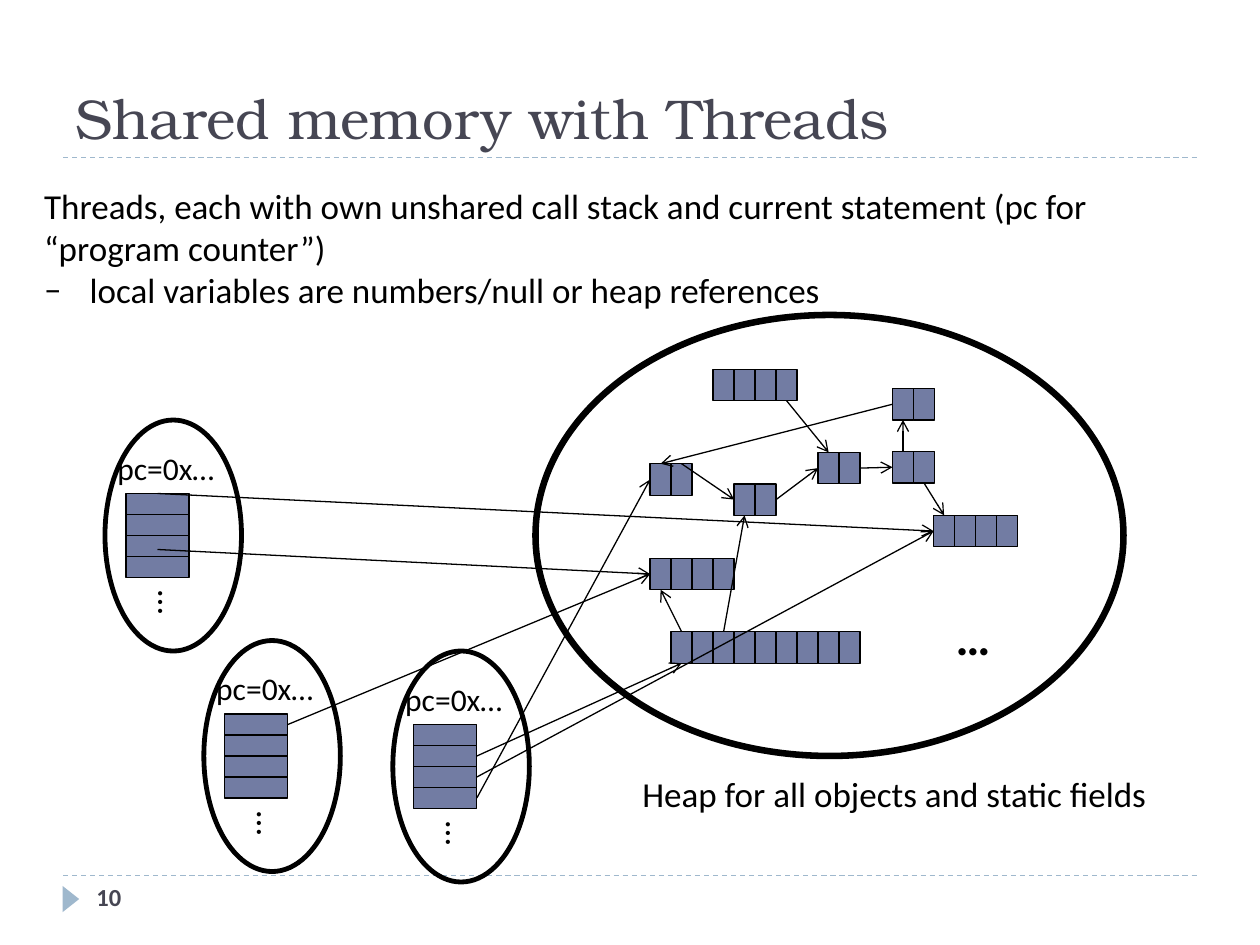
from dataclasses import dataclass
from typing import Any, Optional

import lxml.etree
import pptx
import pptx.dml.color
import pptx.enum.dml
import pptx.enum.shapes
import pptx.enum.text
import pptx.oxml.ns
import pptx.util

Pt = pptx.util.Pt
RGB = pptx.dml.color.RGBColor
Kind = pptx.enum.shapes.MSO_SHAPE
Anchor = pptx.enum.text.MSO_ANCHOR
qn = pptx.oxml.ns.qn

BLACK = RGB(0x00, 0x00, 0x00)
SLATE = RGB(0x46, 0x46, 0x53)
BLUE = RGB(0x72, 0x7C, 0xA3)
PALE = RGB(0x9F, 0xB8, 0xCD)
BODY = "Calibri"
HEAD = "TeX Gyre Bonum"
TOP, LEFT, BOTTOM, RIGHT = range(4)
CELL = (12, 18)
FRAME = (36, 12)


@dataclass
class Row:
    """A heap object: a row of equal cells."""
    name: str
    x: float
    y: float
    count: int


@dataclass
class Thread:
    name: str
    x: float
    y: float


@dataclass
class Link:
    """An arrow from one cell's side to another's."""
    tail: str
    start: int
    out: int
    head: str
    end: int
    into: int


ROWS = [
    Row("pair", 371.5, 265, 2),
    Row("quad", 371.5, 319, 4),
    Row("mid", 419.5, 276.5, 2),
    Row("hub", 467.5, 258.5, 2),
    Row("top", 407.5, 211, 4),
    Row("far", 533.5, 294.5, 4),
    Row("long", 383.5, 361, 9),
    Row("low", 510, 258, 2),
    Row("high", 510, 222, 2),
]
THREADS = [
    Thread("one", 60, 240),
    Thread("two", 116.5, 366),
    Thread("three", 224.5, 372),
]
LINKS = [
    Link("top", 3, BOTTOM, "hub", 0, TOP),
    Link("pair", 1, TOP, "mid", 0, LEFT),
    Link("mid", 1, RIGHT, "hub", 0, LEFT),
    Link("long", 0, TOP, "quad", 0, BOTTOM),
    Link("long", 2, TOP, "mid", 0, BOTTOM),
    Link("one", 0, TOP, "far", 0, LEFT),
    Link("two", 0, RIGHT, "quad", 0, LEFT),
    Link("three", 1, RIGHT, "long", 0, BOTTOM),
    Link("three", 3, RIGHT, "pair", 0, LEFT),
    Link("three", 2, RIGHT, "far", 0, LEFT),
    Link("hub", 1, RIGHT, "low", 0, LEFT),
    Link("low", 0, TOP, "high", 0, BOTTOM),
    Link("high", 0, LEFT, "pair", 0, TOP),
    Link("low", 1, BOTTOM, "far", 0, TOP),
]


def shape(slide: Any, kind: Any, x: float, y: float, w: float, h: float,
          fill: Optional[RGB], width: float) -> Any:
    """Draw a preset shape; no fill if None, no outline if width is 0."""
    item = slide.shapes.add_shape(kind, Pt(x), Pt(y), Pt(w), Pt(h))
    item.shadow.inherit = False
    if fill is None:
        item.fill.background()
    else:
        item.fill.solid()
        item.fill.fore_color.rgb = fill
    if width:
        item.line.color.rgb = BLACK
        item.line.width = Pt(width)
    else:
        item.line.fill.background()
    return item


def line(slide: Any, x1: float, y1: float, x2: float, y2: float,
         color: RGB, dash: bool = False, arrow: bool = False) -> Any:
    item = slide.shapes.add_connector(
        pptx.enum.shapes.MSO_CONNECTOR.STRAIGHT, Pt(x1), Pt(y1), Pt(x2), Pt(y2))
    item.line.color.rgb = color
    item.line.width = Pt(0.75)
    if dash:
        item.line.dash_style = pptx.enum.dml.MSO_LINE.DASH
    props = item.element.spPr
    if arrow:
        lxml.etree.SubElement(props.get_or_add_ln(), qn("a:tailEnd"), type="arrow")
    lxml.etree.SubElement(props, qn("a:effectLst"))
    return item


def write(para: Any, text: str, size: float, color: RGB = BLACK,
          bold: bool = False, face: str = BODY) -> None:
    run = para.add_run()
    run.text = text
    run.font.size = Pt(size)
    run.font.name = face
    run.font.bold = bold
    run.font.color.rgb = color


def label(slide: Any, x: float, y: float, w: float, h: float, text: str,
          size: float, color: RGB = BLACK, bold: bool = False) -> Any:
    box = slide.shapes.add_textbox(Pt(x), Pt(y), Pt(w), Pt(h))
    box.text_frame.word_wrap = False
    write(box.text_frame.paragraphs[0], text, size, color, bold)
    return box


def place(item: Any, x: float, y: float, w: float, h: float) -> None:
    item.left, item.top, item.width, item.height = Pt(x), Pt(y), Pt(w), Pt(h)


def bullet(para: Any, mark: Optional[str], indent: float) -> None:
    """Set the hanging indent and the mark, or remove the mark if None."""
    props = para._p.get_or_add_pPr()
    props.set("marL", str(Pt(indent)))
    props.set("indent", str(-Pt(indent)))
    if mark is None:
        lxml.etree.SubElement(props, qn("a:buNone"))
    else:
        lxml.etree.SubElement(props, qn("a:buFont"), typeface=BODY)
        lxml.etree.SubElement(props, qn("a:buChar"), char=mark)


def words(slide: Any) -> None:
    """Fill the title and the list."""
    title, body = slide.shapes.title, slide.placeholders[1]
    place(title, 36, 12, 648, 78)
    title.text_frame.vertical_anchor = Anchor.BOTTOM
    para = title.text_frame.paragraphs[0]
    para.alignment = pptx.enum.text.PP_ALIGN.LEFT
    write(para, "Shared memory with Threads", 32, SLATE, face=HEAD)

    place(body, 18, 102, 645, 80)
    frame = body.text_frame
    frame.auto_size = pptx.enum.text.MSO_AUTO_SIZE.NONE
    items = [
        (None, 0, "Threads, each with own unshared call stack and current "
                  "statement (pc for “program counter”)"),
        ("–", 26, "local variables are numbers/null or heap references"),
    ]
    for i, (mark, indent, text) in enumerate(items):
        para = frame.add_paragraph() if i else frame.paragraphs[0]
        para.space_before = Pt(0)
        bullet(para, mark, indent)
        write(para, text, 20)


def main() -> None:
    deck = pptx.Presentation()
    deck.slide_width, deck.slide_height = Pt(720), Pt(540)
    slide = deck.slides.add_slide(deck.slide_layouts[1])
    for y in (500.5, 90):
        line(slide, 36, y, 684, y, PALE, dash=True)
    shape(slide, Kind.ISOSCELES_TRIANGLE, 33, 509, 15, 9.5, PALE, 0).rotation = 90
    words(slide)
    label(slide, 48, 500.5, 156, 29, "10", 14, SLATE, bold=True)

    shape(slide, Kind.OVAL, 306, 180, 336, 252, None, 3.75)
    label(slide, 539, 343, 42.5, 41, "…", 28, bold=True)
    label(slide, 360, 438, 332, 31.5, "Heap for all objects and static fields", 20)

    cells = {}
    for row in ROWS:
        cells[row.name] = [
            shape(slide, Kind.RECTANGLE, row.x + i * CELL[0], row.y, *CELL, BLUE, 0.75)
            for i in range(row.count)]
    for thread in THREADS:
        x, y = thread.x, thread.y
        shape(slide, Kind.OVAL, x, y, 78, 132, None, 2.75)
        cells[thread.name] = [
            shape(slide, Kind.RECTANGLE, x + 12, y + 42 + i * FRAME[1], *FRAME, BLUE, 0.75)
            for i in range(4)]
        label(slide, x, y + 13, 81, 29, "pc=0x…", 18)
        label(slide, x + 21, y + 92, 34.5, 31.5, "…", 20).rotation = 90

    for link in LINKS:
        arrow = line(slide, 0, 0, 0, 0, BLACK, arrow=True)
        arrow.begin_connect(cells[link.tail][link.start], link.out)
        arrow.end_connect(cells[link.head][link.end], link.into)
    inner = line(slide, 90, 314, 371.5, 328, BLACK, arrow=True)
    inner.end_connect(cells["quad"][0], LEFT)
    deck.save("out.pptx")


if __name__ == "__main__":
    main()
